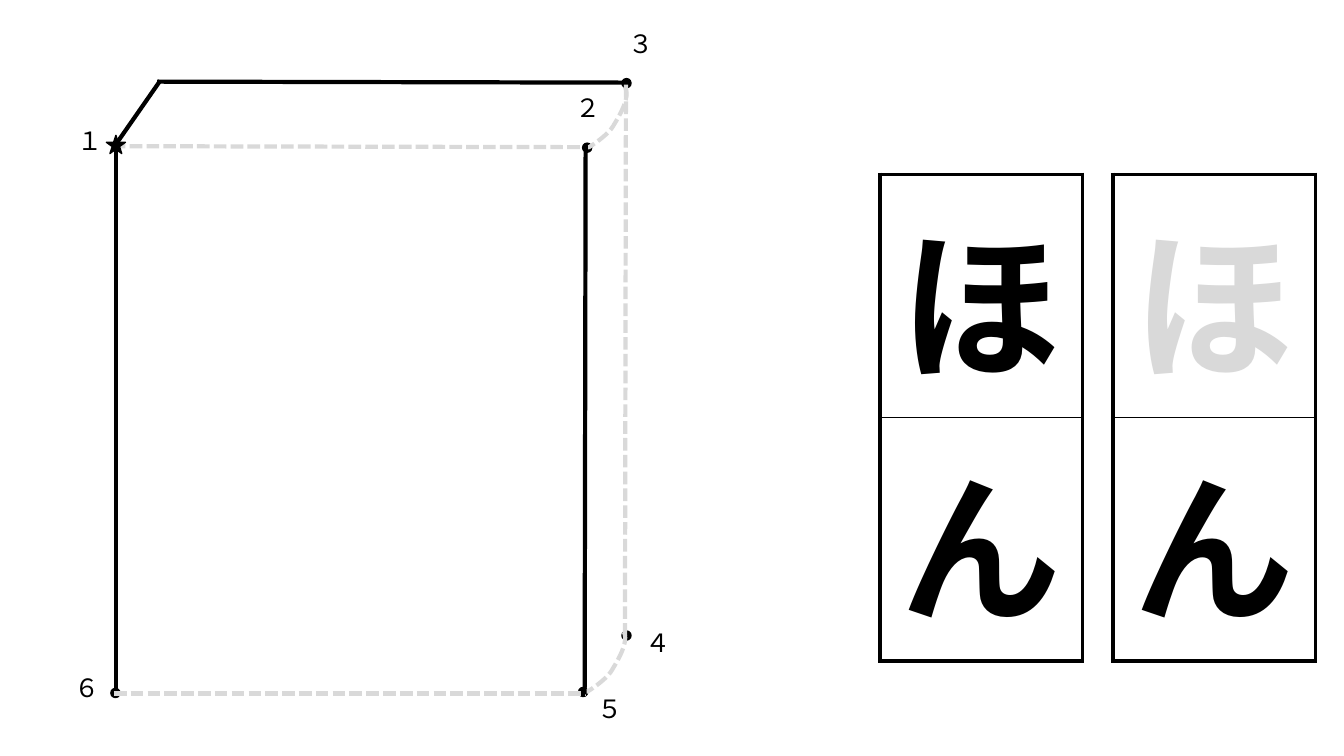
from lxml import etree
from pptx import Presentation
from pptx.dml.color import RGBColor
from pptx.enum.dml import MSO_LINE
from pptx.enum.shapes import MSO_CONNECTOR, MSO_SHAPE
from pptx.enum.text import MSO_ANCHOR, MSO_AUTO_SIZE, PP_ALIGN
from pptx.oxml.ns import qn
from pptx.util import Pt

STRAIGHT = MSO_CONNECTOR.STRAIGHT
DASH = MSO_LINE.SQUARE_DOT
OVAL, STAR = MSO_SHAPE.OVAL, MSO_SHAPE.STAR_5_POINT
MIDDLE, CENTER = MSO_ANCHOR.MIDDLE, PP_ALIGN.CENTER
GROW = MSO_AUTO_SIZE.SHAPE_TO_FIT_TEXT

# Content, all lengths in points
FONT = "Noto Sans CJK JP"
BLACK, GREY = "000000", "D9D9D9"
THICK, THIN = 3, 1

# Lines: x1, y1, x2, y2, colour
BACK = [
    (80.64, 104.4, 417.6, 105.12, GREY),
    (114.48, 57.6, 81.36, 105.12, BLACK),
]
SIDE = [
    (82.8, 104.4, 82.8, 495.36, BLACK),
    (81.36, 495.36, 418.32, 495.36, GREY),
]
FRONT = [
    (418.32, 102.96, 417.6, 496.08, BLACK),
    (112.32, 58.32, 448.56, 59.04, BLACK),
    (447.12, 60.48, 446.4, 454.32, GREY),
]

# Word cards: left edge, letters with colours
CARDS = [
    (794.88, [("ほ", GREY), ("ん", BLACK)]),
    (628.56, [("ほ", BLACK), ("ん", BLACK)]),
]
CARD_TOP, CARD_W, ROW_H = 124.56, 144.72, 142

DOTS = [(79.2, 491.76), (413.28, 491.04), (416.16, 102.24),
        (444.24, 56.16), (444.24, 450.72)]
DOT = 6.48

LABELS = [
    ("１", 48.24, 85.68), ("２", 403.92, 62.64), ("３", 442.08, 16.56),
    ("４", 454.32, 444.24), ("５", 419.76, 491.76), ("６", 46.08, 476.64),
]

# Rounded corner: two cubic curves, drawn at the bottom and at the top
CURVES = [
    [(445.68, 451.44), (449.28, 458.64), (441.36, 471.6), (437.04, 478.8)],
    [(437.04, 478.8), (432.72, 486), (419.76, 493.92), (419.76, 493.92)],
]
TAIL = (419.04, 493.92)
SHIFTS = [(0, 0), (1, -388.8)]
STEPS = 12


def color(text):
    return RGBColor.from_string(text)


def stroke(shape, tone, width):
    shape.line.color.rgb = color(tone)
    shape.line.width = Pt(width)
    if tone == GREY:
        shape.line.dash_style = DASH


def write(frame, text, size, tone, bold=False):
    para = frame.paragraphs[0]
    run = para.add_run()
    run.text = text
    font = run.font
    font.name, font.size, font.bold = FONT, Pt(size), bold
    font.color.rgb = color(tone)
    east = etree.SubElement(run._r.get_or_add_rPr(), qn("a:ea"))
    east.set("typeface", FONT)
    return para


def draw_lines(rows):
    for x1, y1, x2, y2, tone in rows:
        line = slide.shapes.add_connector(
            STRAIGHT, Pt(x1), Pt(y1), Pt(x2), Pt(y2))
        stroke(line, tone, THICK)
        etree.SubElement(line._element.spPr, qn("a:effectLst"))


def draw_mark(kind, x, y, w, h):
    mark = slide.shapes.add_shape(kind, Pt(x), Pt(y), Pt(w), Pt(h))
    mark.shadow.inherit = False
    mark.fill.solid()
    mark.fill.fore_color.rgb = color(BLACK)
    stroke(mark, BLACK, THIN)
    return mark


def set_edges(cell, widths):
    props = cell._tc.get_or_add_tcPr()
    for pos, (side, width) in enumerate(widths.items()):
        edge = etree.Element(qn("a:ln" + side), w=str(int(Pt(width))))
        fill = etree.SubElement(edge, qn("a:solidFill"))
        etree.SubElement(fill, qn("a:srgbClr"), val=BLACK)
        props.insert(pos, edge)


def draw_card(left, letters):
    count = len(letters)
    table = slide.shapes.add_table(
        count, 1, Pt(left), Pt(CARD_TOP), Pt(CARD_W),
        Pt(ROW_H * count)).table
    table.first_row = table.horz_banding = False
    for i, (letter, tone) in enumerate(letters):
        cell = table.cell(i, 0)
        cell.fill.background()
        cell.vertical_anchor = MIDDLE
        write(cell.text_frame, letter, 115, tone, True).alignment = CENTER
        top = THICK if i == 0 else THIN
        base = THICK if i == count - 1 else THIN
        set_edges(cell, {"L": THICK, "R": THICK, "T": top, "B": base})


def bend(curve, t):
    parts = ((1 - t) ** 3, 3 * t * (1 - t) ** 2, 3 * t * t * (1 - t), t ** 3)
    return tuple(sum(k * p[axis] for k, p in zip(parts, curve))
                 for axis in (0, 1))


def draw_corner(dx, dy):
    dots = [bend(c, i / STEPS) for c in CURVES for i in range(1, STEPS + 1)]
    spots = [(Pt(x + dx), Pt(y + dy)) for x, y in [CURVES[0][0], *dots, TAIL]]
    form = slide.shapes.build_freeform(*spots[0])
    form.add_line_segments(spots[1:], close=False)
    arc = form.convert_to_shape()
    arc.shadow.inherit = False
    arc.fill.background()
    stroke(arc, GREY, THICK)


deck = Presentation()
deck.slide_width, deck.slide_height = Pt(960), Pt(540)
slide = deck.slides.add_slide(deck.slide_layouts[6])

# Back edges, cards and corner dots
draw_lines(BACK)
for left, letters in CARDS:
    draw_card(left, letters)
for x, y in DOTS:
    draw_mark(OVAL, x, y, DOT, DOT)

# Corner numbers
for text, x, y in LABELS:
    box = slide.shapes.add_textbox(Pt(x), Pt(y), Pt(28.08), Pt(28.8))
    box.text_frame.word_wrap = True
    box.text_frame.auto_size = GROW
    write(box.text_frame, text, 18, BLACK)

# Start star, front edges and rounded corners
draw_lines(SIDE)
draw_mark(STAR, 76.32, 97.92, 13.68, 12.96).rotation = 144.2
draw_lines(FRONT)
for shift in SHIFTS:
    draw_corner(*shift)

deck.save("out.pptx")
